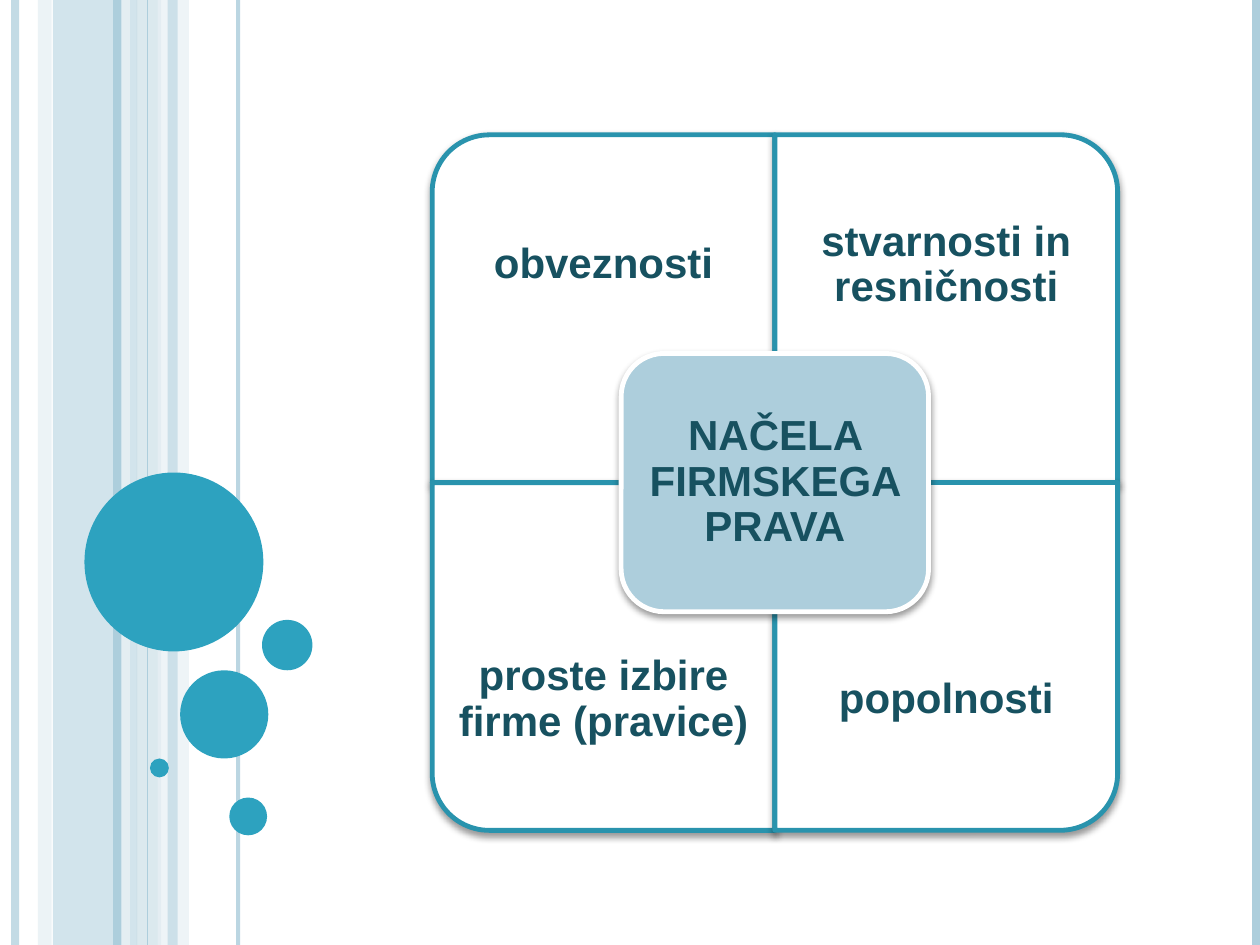
from dataclasses import dataclass

from lxml.etree import SubElement
from pptx import Presentation
from pptx.dml.color import RGBColor
from pptx.enum.shapes import MSO_CONNECTOR as Connector, MSO_SHAPE as Shape
from pptx.enum.text import MSO_ANCHOR as Anchor, PP_ALIGN as Align
from pptx.oxml.ns import qn
from pptx.util import Inches, Pt


@dataclass(frozen=True)
class Theme:
    pale: str = "ADCEDC"
    paler: str = "CDE0E8"
    palest: str = "E8F0F4"
    accent: str = "2DA2BF"
    outline: str = "2993AD"
    ink: str = "175160"
    white: str = "FFFFFF"
    shadow: str = "000000"
    font: str = "Arial"
    text_size: float = 24
    outline_width: float = 2.75


@dataclass(frozen=True)
class Band:
    left: float
    width: float
    color: str
    opacity: int


@dataclass(frozen=True)
class Stripe:
    x: float
    weight: float
    color: str
    opacity: int = 100


@dataclass(frozen=True)
class Bubble:
    left: float
    top: float
    size: float


@dataclass(frozen=True)
class Quadrant:
    column: int
    row: int
    rotation: int
    label: str


THEME = Theme()
PAGE_WIDTH, PAGE_HEIGHT = 10, 7.5
MATRIX_LEFT, MATRIX_TOP = 3.43, 1.07
CELL_WIDTH, CELL_HEIGHT = 2.72, 2.76
LABEL_HEIGHT = CELL_HEIGHT * 0.75
HUB_WIDTH, HUB_HEIGHT, HUB_INSET = 2.44, 2.05, 0.1

BACK_BANDS = [
    Band(0.42, 0.67, THEME.pale, 54),
    Band(0.3, 0.11, THEME.paler, 36),
    Band(1.08, 0.2, THEME.paler, 70),
    Band(1.25, 0.25, THEME.palest, 71),
]
STRIPES = [
    Stripe(0.12, 4.5, THEME.pale, 73),
    Stripe(1, 4.5, THEME.palest, 83),
    Stripe(0.93, 4.5, THEME.pale),
    Stripe(1.89, 2.25, THEME.pale, 82),
    Stripe(1.17, 0.75, THEME.pale),
    Stripe(9.97, 4.5, THEME.pale),
]
FRONT_BAND = Band(1.33, 0.08, THEME.pale, 51)
BUBBLES = [
    Bubble(0.67, 3.75, 1.42),
    Bubble(1.43, 5.32, 0.7),
    Bubble(1.19, 6.02, 0.15),
    Bubble(1.82, 6.33, 0.3),
    Bubble(2.08, 4.92, 0.4),
]
QUADRANTS = [
    Quadrant(0, 0, 270, "obveznosti"),
    Quadrant(1, 0, 0, "stvarnosti in resničnosti"),
    Quadrant(0, 1, 180, "proste izbire firme (pravice)"),
    Quadrant(1, 1, 90, "popolnosti"),
]


def set_opacity(shape, percent: int) -> None:
    color = next(shape._element.spPr.iter(qn("a:srgbClr")))
    SubElement(color, qn("a:alpha"), val=str(percent * 1000))


def add_filled(page, kind, left: float, top: float, width: float, height: float, color: str):
    shape = page.shapes.add_shape(kind, Inches(left), Inches(top), Inches(width), Inches(height))
    shape.shadow.inherit = False
    shape.fill.solid()
    shape.fill.fore_color.rgb = RGBColor.from_string(color)
    shape.line.fill.background()
    return shape


def add_band(page, band: Band) -> None:
    shape = add_filled(page, Shape.RECTANGLE, band.left, 0, band.width, PAGE_HEIGHT, band.color)
    set_opacity(shape, band.opacity)


def add_stripe(page, stripe: Stripe) -> None:
    x = Inches(stripe.x)
    line = page.shapes.add_connector(Connector.STRAIGHT, x, 0, x, Inches(PAGE_HEIGHT))
    line.line.color.rgb = RGBColor.from_string(stripe.color)
    line.line.width = Pt(stripe.weight)
    SubElement(line._element.spPr, qn("a:effectLst"))
    if stripe.opacity < 100:
        set_opacity(line, stripe.opacity)


def add_card(page, kind, left: float, top: float, width: float, height: float,
             fill: str, outline: str):
    card = add_filled(page, kind, left, top, width, height, fill)
    card.line.color.rgb = RGBColor.from_string(outline)
    card.line.width = Pt(THEME.outline_width)
    effects = card._element.spPr.find(qn("a:effectLst"))
    shadow = SubElement(effects, qn("a:outerShdw"), blurRad=str(Pt(4)), dist=str(Pt(2)),
                        dir="5400000", rotWithShape="0")
    color = SubElement(shadow, qn("a:srgbClr"), val=THEME.shadow)
    SubElement(color, qn("a:alpha"), val="40000")
    return card


def add_label(page, text: str, left: float, top: float, width: float, height: float,
              margin: float) -> None:
    box = page.shapes.add_textbox(Inches(left), Inches(top), Inches(width), Inches(height))
    frame = box.text_frame
    frame.text = text
    frame.word_wrap = True
    frame.vertical_anchor = Anchor.MIDDLE
    frame.margin_left = frame.margin_right = Inches(margin)
    frame.margin_top = frame.margin_bottom = Inches(margin)
    para = frame.paragraphs[0]
    para.alignment = Align.CENTER
    para.line_spacing = 0.9
    font = para.runs[0].font
    font.name, font.size, font.bold = THEME.font, Pt(THEME.text_size), True
    font.color.rgb = RGBColor.from_string(THEME.ink)


def add_quadrant(page, quadrant: Quadrant) -> None:
    left = MATRIX_LEFT + quadrant.column * CELL_WIDTH
    top = MATRIX_TOP + quadrant.row * CELL_HEIGHT
    width, height = CELL_WIDTH, CELL_HEIGHT
    if quadrant.rotation % 180:
        width, height = height, width
    card = add_card(page, Shape.ROUND_1_RECTANGLE, left + (CELL_WIDTH - width) / 2,
                    top + (CELL_HEIGHT - height) / 2, width, height, THEME.white, THEME.outline)
    card.rotation = quadrant.rotation
    label_top = top + quadrant.row * (CELL_HEIGHT - LABEL_HEIGHT)
    add_label(page, quadrant.label, left, label_top, CELL_WIDTH, LABEL_HEIGHT, 0.19)


def add_hub(page, text: str) -> None:
    left = MATRIX_LEFT + CELL_WIDTH - HUB_WIDTH / 2
    top = MATRIX_TOP + CELL_HEIGHT - HUB_HEIGHT / 2
    add_card(page, Shape.ROUNDED_RECTANGLE, left, top, HUB_WIDTH, HUB_HEIGHT,
             THEME.pale, THEME.white)
    add_label(page, text, left + HUB_INSET, top + HUB_INSET, HUB_WIDTH - 2 * HUB_INSET,
              HUB_HEIGHT - 2 * HUB_INSET, 0.1)


def main() -> None:
    """Build the slide on the principles of company-name law."""
    deck = Presentation()
    deck.slide_width, deck.slide_height = Inches(PAGE_WIDTH), Inches(PAGE_HEIGHT)
    page = deck.slides.add_slide(deck.slide_layouts[6])
    for band in BACK_BANDS:
        add_band(page, band)
    for stripe in STRIPES:
        add_stripe(page, stripe)
    add_band(page, FRONT_BAND)
    for bubble in BUBBLES:
        add_filled(page, Shape.OVAL, bubble.left, bubble.top, bubble.size, bubble.size,
                   THEME.accent)
    for quadrant in QUADRANTS:
        add_quadrant(page, quadrant)
    add_hub(page, "NAČELA FIRMSKEGA PRAVA")
    deck.save("out.pptx")


if __name__ == "__main__":
    main()
